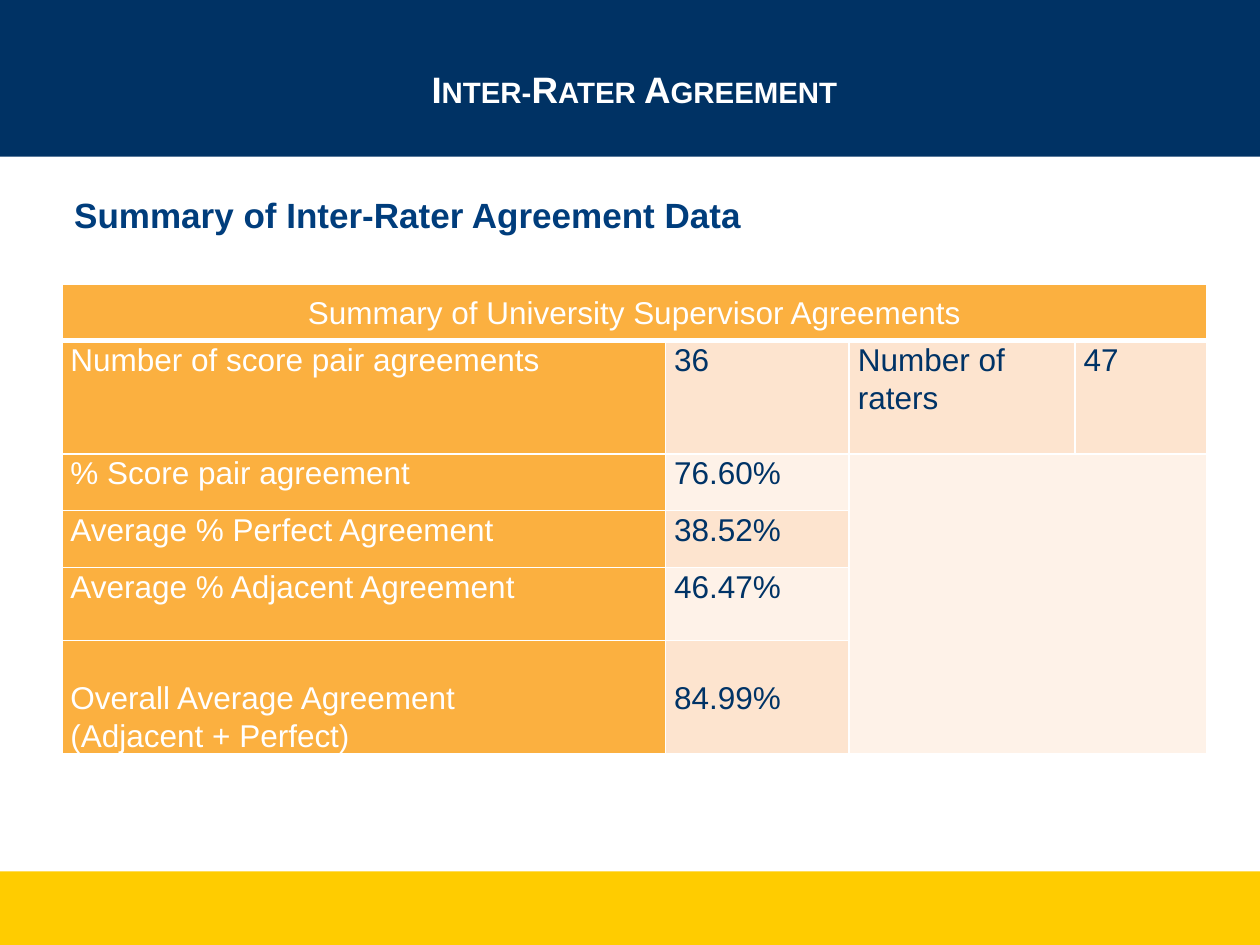
"""Build the inter-rater agreement summary slide."""
from dataclasses import dataclass

import pptx
import pptx.dml.color
import pptx.enum.shapes
import pptx.enum.text
import pptx.oxml
import pptx.oxml.ns
import pptx.slide
import pptx.table
import pptx.text.text
import pptx.util

Pt = pptx.util.Pt
RGB = pptx.dml.color.RGBColor.from_string
Anchor = pptx.enum.text.MSO_ANCHOR
Align = pptx.enum.text.PP_ALIGN


@dataclass(frozen=True)
class Theme:
    font: str = "Arial"
    white: str = "FFFFFF"
    navy: str = "003264"
    yellow: str = "FFCC00"
    heading: str = "003D7C"
    value: str = "003366"
    label_fill: str = "FBB040"
    dark_band: str = "FDE4CF"
    light_band: str = "FEF2E8"
    title_size: float = 21
    heading_size: float = 20
    table_size: float = 18
    line_spacing: float = 1.07


@dataclass(frozen=True)
class Band:
    top: float
    height: float
    color: str


@dataclass(frozen=True)
class Cell:
    row: int
    col: int
    text: str
    fill: str
    color: str
    align: Align = Align.LEFT
    anchor: Anchor = Anchor.TOP
    margin_top: float = 0


T = Theme()
SLIDE_W, SLIDE_H = 720, 540
LEFT, WIDTH = 35.3, 654.5
BANDS = [Band(498, 42, T.yellow), Band(0, 89.5, T.navy)]
COL_WIDTHS = [345, 105, 129, 75.5]
ROW_HEIGHTS = [32.4, 64.8, 32.4, 32.4, 41.8, 64.8]
LABELS = [
    "Number of score pair agreements",
    "% Score pair agreement",
    "Average % Perfect Agreement",
    "Average % Adjacent Agreement",
    "Overall Average Agreement\n(Adjacent + Perfect)",
]
VALUES = ["36", "76.60%", "38.52%", "46.47%", "84.99%"]


def style_paragraph(p: pptx.text.text._Paragraph, size: float, color: str,
                    bold: bool = False) -> None:
    """Apply the theme font to a whole paragraph."""
    p.font.name = T.font
    p.font.size = Pt(size)
    p.font.bold = bold
    p.font.color.rgb = RGB(color)


def draw_band(s: pptx.slide.Slide, band: Band) -> None:
    """Draw a full-width colour band."""
    sp = s.shapes.add_shape(pptx.enum.shapes.MSO_SHAPE.RECTANGLE,
                            0, Pt(band.top), Pt(SLIDE_W), Pt(band.height))
    sp.shadow.inherit = False
    sp.fill.solid()
    sp.fill.fore_color.rgb = RGB(band.color)
    sp.line.fill.background()


def draw_title(s: pptx.slide.Slide, text: str) -> None:
    """Place the small-caps title in front of the bands."""
    sp = s.shapes.title
    sp.left, sp.top, sp.width, sp.height = Pt(LEFT), Pt(11.5), Pt(WIDTH), Pt(78)
    s.shapes._spTree.append(sp._element)
    tf = sp.text_frame
    tf.text = text
    tf.auto_size = pptx.enum.text.MSO_AUTO_SIZE.NONE
    tf.vertical_anchor = Anchor.MIDDLE
    p = tf.paragraphs[0]
    p.alignment = Align.CENTER
    style_paragraph(p, T.title_size, T.white, bold=True)
    p.font._element.set("cap", "small")


def draw_heading(s: pptx.slide.Slide, text: str) -> None:
    """Draw the heading above the table."""
    tf = s.shapes.add_textbox(Pt(LEFT), Pt(107.3), Pt(WIDTH), Pt(45)).text_frame
    tf.word_wrap = True
    tf.text = text
    p = tf.paragraphs[0]
    p.space_before = Pt(4)
    style_paragraph(p, T.heading_size, T.heading, bold=True)


def set_borders(cell: pptx.table._Cell, bottom: float = 1) -> None:
    """Give a cell white borders."""
    tc_pr = cell._tc.get_or_add_tcPr()
    for side, width in zip("LRTB", (1, 1, 1, bottom)):
        tc_pr.append(pptx.oxml.parse_xml(
            f'<a:ln{side} {pptx.oxml.ns.nsdecls("a")} w="{Pt(width)}"><a:solidFill>'
            f'<a:srgbClr val="{T.white}"/></a:solidFill></a:ln{side}>'))


def fill_cell(table: pptx.table.Table, spec: Cell) -> None:
    """Write and format one table cell."""
    cell = table.cell(spec.row, spec.col)
    cell.fill.solid()
    cell.fill.fore_color.rgb = RGB(spec.fill)
    cell.margin_left = cell.margin_right = Pt(5)
    cell.margin_top, cell.margin_bottom = Pt(spec.margin_top), 0
    cell.vertical_anchor = spec.anchor
    cell.text = spec.text
    for p in cell.text_frame.paragraphs:
        p.alignment = spec.align
        p.line_spacing = T.line_spacing
        style_paragraph(p, T.table_size, spec.color)


def table_cells() -> list[Cell]:
    """List the table cells with their banding."""
    cells = [
        Cell(0, 0, "Summary of University Supervisor Agreements", T.label_fill, T.white,
             Align.CENTER, Anchor.MIDDLE),
        Cell(1, 2, "Number of raters", T.dark_band, T.value),
        Cell(1, 3, "47", T.dark_band, T.value),
        Cell(2, 2, "", T.light_band, T.value),
    ]
    for row, (label, value) in enumerate(zip(LABELS, VALUES), start=1):
        last = row == len(LABELS)
        cells.append(Cell(row, 0, label, T.label_fill, T.white,
                          anchor=Anchor.BOTTOM if last else Anchor.TOP))
        cells.append(Cell(row, 1, value, T.dark_band if row % 2 else T.light_band,
                          T.value, margin_top=21.7 if last else 0))
    return cells


def draw_table(s: pptx.slide.Slide) -> None:
    """Draw the agreement table."""
    table = s.shapes.add_table(len(ROW_HEIGHTS), len(COL_WIDTHS), Pt(LEFT), Pt(162.2),
                               Pt(WIDTH), Pt(sum(ROW_HEIGHTS))).table
    table.first_row = table.horz_banding = False
    tbl_pr = table._tbl.tblPr
    tbl_pr.remove(tbl_pr.find(pptx.oxml.ns.qn("a:tableStyleId")))
    for column, width in zip(table.columns, COL_WIDTHS):
        column.width = Pt(width)
    for i, (row, height) in enumerate(zip(table.rows, ROW_HEIGHTS)):
        row.height = Pt(height)
        for cell in row.cells:
            set_borders(cell, bottom=1 if i else 3)
    table.cell(0, 0).merge(table.cell(0, 3))
    table.cell(2, 2).merge(table.cell(5, 3))
    for spec in table_cells():
        fill_cell(table, spec)


def main() -> None:
    """Build and save the presentation."""
    prs = pptx.Presentation()
    prs.slide_width, prs.slide_height = Pt(SLIDE_W), Pt(SLIDE_H)
    s = prs.slides.add_slide(prs.slide_layouts.get_by_name("Title Only"))
    for band in BANDS:
        draw_band(s, band)
    draw_title(s, "Inter-Rater Agreement")
    draw_heading(s, "Summary of Inter-Rater Agreement Data")
    draw_table(s)
    prs.save("out.pptx")


if __name__ == "__main__":
    main()
